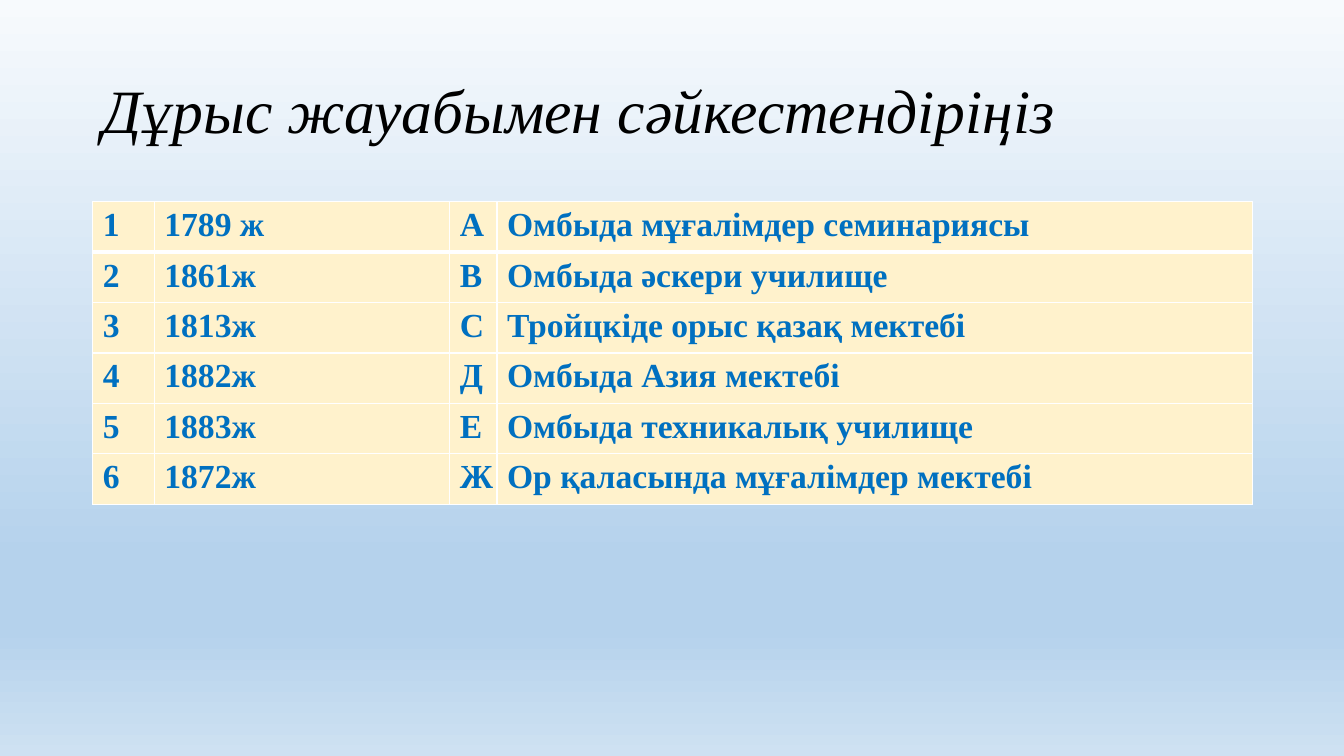
from dataclasses import dataclass

from lxml import etree
from pptx import Presentation
from pptx.dml.color import RGBColor
from pptx.enum.text import MSO_ANCHOR
from pptx.oxml.ns import qn
from pptx.util import Inches, Pt

MIDDLE = MSO_ANCHOR.MIDDLE


@dataclass(frozen=True)
class Theme:
    font: str = "Times New Roman"
    title: str = "000000"
    text: str = "0070C0"
    cell: str = "FFF2CC"
    rule: str = "FFFFFF"
    title_size: int = 44
    cell_size: int = 24
    sky: tuple = ((0, "F7FAFD"), (74, "B5D2EC"), (83, "B5D2EC"), (100, "CEE1F2"))


THEME = Theme()
WIDTHS = (0.61, 2.93, 0.47, 7.49)
ROW_HEIGHT = 0.47
PAIRS = (
    ("1789 ж", "А", "Омбыда мұғалімдер семинариясы"),
    ("1861ж", "В", "Омбыда әскери училище"),
    ("1813ж", "С", "Тройцкіде орыс қазақ мектебі"),
    ("1882ж", "Д", "Омбыда Азия мектебі"),
    ("1883ж", "Е", "Омбыда техникалық училище"),
    ("1872ж", "Ж", "Ор қаласында мұғалімдер мектебі"),
)


def add_color(parent, color):
    etree.SubElement(parent, qn("a:srgbClr"), val=color)


def paint_sky(slide):
    """Fill the background with a gradient from top to bottom."""
    fill = slide.background.fill
    fill.gradient()
    fill.gradient_angle = 270
    stops = next(slide.background._cSld.iter(qn("a:gsLst")))
    for stop in list(stops):
        stops.remove(stop)
    for place, color in THEME.sky:
        stop = etree.SubElement(stops, qn("a:gs"), pos=str(place * 1000))
        add_color(stop, color)


def write(frame, text, size, color, bold=False, italic=False, spacing=None):
    para = frame.paragraphs[0]
    para.line_spacing = spacing
    run = para.add_run()
    run.text = text
    font = run.font
    font.name = THEME.font
    font.size = Pt(size)
    font.bold = bold
    font.italic = italic
    font.color.rgb = RGBColor.from_string(color)


def add_title(slide, text):
    box = slide.shapes.add_textbox(Inches(0.92), Inches(0.4), Inches(11.5), Inches(1.45))
    frame = box.text_frame
    frame.word_wrap = True
    frame.vertical_anchor = MIDDLE
    write(frame, text, THEME.title_size, THEME.title, italic=True, spacing=0.9)


def add_edges(cell, top, bottom):
    """Draw the four cell borders; top and bottom are widths in points."""
    props = cell._tc.get_or_add_tcPr()
    for side, width in (("L", 1), ("R", 1), ("T", top), ("B", bottom)):
        line = etree.SubElement(props, qn(f"a:ln{side}"), w=str(Pt(width)))
        add_color(etree.SubElement(line, qn("a:solidFill")), THEME.rule)


def add_grid(slide, rows):
    frame = slide.shapes.add_table(
        len(rows), len(WIDTHS), Inches(0.92), Inches(2),
        Inches(sum(WIDTHS)), Inches(ROW_HEIGHT * len(rows)))
    table = frame.table
    table.first_row = table.horz_banding = False
    for col, width in zip(table.columns, WIDTHS):
        col.width = Inches(width)
    for r, texts in enumerate(rows):
        table.rows[r].height = Inches(ROW_HEIGHT)
        for c, text in enumerate(texts):
            cell = table.cell(r, c)
            add_edges(cell, top=3 if r == 1 else 1, bottom=3 if r == 0 else 1)
            cell.fill.solid()
            cell.fill.fore_color.rgb = RGBColor.from_string(THEME.cell)
            write(cell.text_frame, text, THEME.cell_size, THEME.text, bold=True)


def main():
    deck = Presentation()
    deck.slide_width, deck.slide_height = Inches(13.33), Inches(7.5)
    slide = deck.slides.add_slide(deck.slide_layouts[6])
    paint_sky(slide)
    add_title(slide, "Дұрыс жауабымен сәйкестендіріңіз")
    add_grid(slide, [(str(n), *pair) for n, pair in enumerate(PAIRS, 1)])
    deck.save("out.pptx")


if __name__ == "__main__":
    main()
